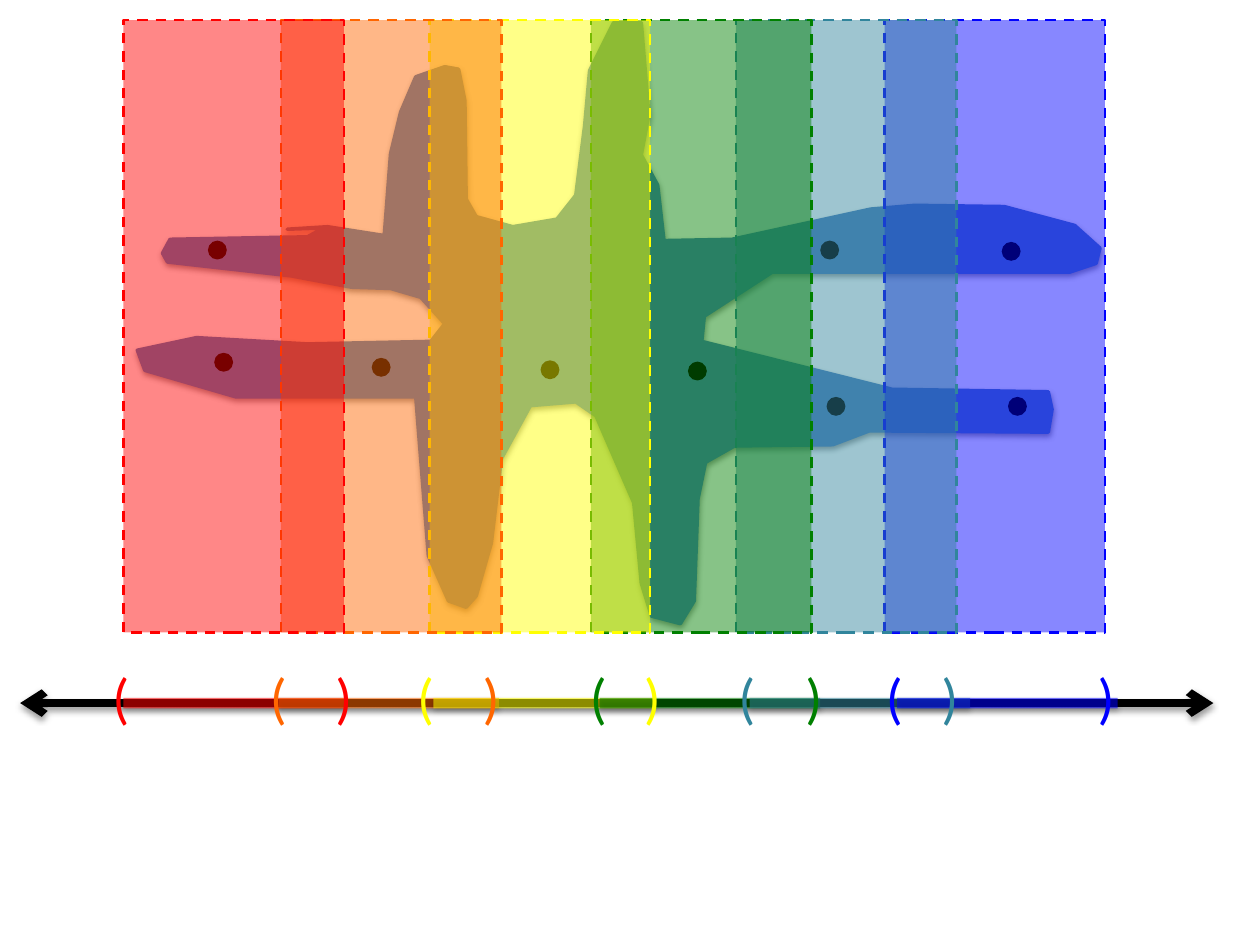
from lxml import etree
from pptx import Presentation
from pptx.dml.color import RGBColor
from pptx.enum.dml import MSO_LINE
from pptx.enum.shapes import MSO_CONNECTOR, MSO_SHAPE
from pptx.enum.text import MSO_AUTO_SIZE
from pptx.oxml.ns import qn
from pptx.util import Inches, Pt

DASH = MSO_LINE.DASH
ELLIPSE = MSO_SHAPE.OVAL
RECTANGLE = MSO_SHAPE.RECTANGLE
STRAIGHT = MSO_CONNECTOR.STRAIGHT
FIT_SHAPE = MSO_AUTO_SIZE.SHAPE_TO_FIT_TEXT

BLOB_COLOR = "4F81BD"
BLACK = "000000"
INTERVAL_LENGTH = 1.75
BAND_TOP, BAND_HEIGHT = 0.16, 4.86
AXIS_Y = 5.58
DOT_SIZE = 0.15

# Colour, left edge of the band, left end of the interval on the axis
COVER = [
    ("FF0000", 0.98, 0.98),
    ("FF6600", 2.23, 2.21),
    ("FFFF00", 3.41, 3.44),
    ("008000", 4.69, 4.76),
    ("31859C", 5.84, 5.95),
    ("0000FF", 7.02, 7.12),
]

# Centres of the opening and closing bracket of each interval, from the text edge
BRACKETS = [(0.16, 1.93), (1.41, 3.10), (2.58, 4.38),
            (3.95, 5.66), (5.13, 6.74), (6.30, 7.98)]

# Dots that belong together share a group
DOT_GROUPS = [
    [(1.65, 1.91), (1.70, 2.80)],
    [(2.95, 2.84)],
    [(4.29, 2.86)],
    [(5.46, 2.87)],
    [(6.51, 1.91), (6.56, 3.15)],
    [(7.95, 1.92), (8.00, 3.15)],
]

# Outline of the blob, in hundredths of an inch
BLOB_OUTLINE = [
    (228, 182), (260, 180), (305, 187), (310, 122), (318, 89), (330, 61),
    (353, 53), (364, 55), (369, 80), (370, 158), (378, 172), (407, 180),
    (442, 174), (457, 155), (464, 100), (468, 56), (487, 18), (509, 18),
    (515, 91), (509, 123), (522, 147), (527, 191), (581, 190), (691, 166),
    (726, 163), (797, 164), (853, 179), (873, 197), (870, 209), (849, 216),
    (613, 216), (559, 251), (557, 271), (708, 309), (832, 311), (835, 325),
    (832, 343), (690, 342), (661, 353), (583, 354), (560, 367), (554, 396),
    (551, 477), (540, 495), (517, 489), (509, 463), (503, 399), (473, 330),
    (457, 319), (421, 322), (398, 364), (390, 431), (378, 473), (370, 482),
    (356, 477), (340, 441), (330, 315), (187, 315), (115, 294), (109, 278),
    (156, 268), (244, 273), (342, 271), (353, 257), (334, 236), (310, 229),
    (279, 228), (231, 219), (133, 208), (129, 201), (135, 190), (244, 188),
    (257, 181),
]


def color(hex_value):
    return RGBColor.from_string(hex_value)


def set_fill(fill, hex_value, opacity=100):
    fill.solid()
    fill.fore_color.rgb = color(hex_value)
    if opacity < 100:
        srgb = fill._xPr.find(".//" + qn("a:srgbClr"))
        etree.SubElement(srgb, qn("a:alpha"), val=str(opacity * 1000))


def set_line(line, hex_value, width, opacity=100):
    set_fill(line.fill, hex_value, opacity)
    line.width = Pt(width)


def add_shadow(shape):
    """Give a shape or connector a soft shadow straight below it."""
    effects = etree.SubElement(shape._element.spPr, qn("a:effectLst"))
    shadow = etree.SubElement(effects, qn("a:outerShdw"), blurRad="40000",
                              dist="20000", dir="5400000", rotWithShape="0")
    tint = etree.SubElement(shadow, qn("a:srgbClr"), val=BLACK)
    etree.SubElement(tint, qn("a:alpha"), val="38000")


def add_blob(page):
    builder = page.shapes.build_freeform(*BLOB_OUTLINE[0], scale=Inches(0.01))
    builder.add_line_segments(BLOB_OUTLINE[1:], close=True)
    blob = builder.convert_to_shape()
    set_fill(blob.fill, BLOB_COLOR)
    set_line(blob.line, BLOB_COLOR, 2)
    add_shadow(blob)


def add_axis_line(page, left, right, hex_value, width, opacity=100):
    line = page.shapes.add_connector(STRAIGHT, Inches(left), Inches(AXIS_Y),
                                     Inches(right), Inches(AXIS_Y))
    set_line(line.line, hex_value, width, opacity)
    add_shadow(line)
    return line


def add_arrowheads(connector):
    outline = connector.line._get_or_add_ln()
    for end in ("a:headEnd", "a:tailEnd"):
        etree.SubElement(outline, qn(end), type="arrow")


def add_brackets(page):
    """Write all brackets on one line, each centred on its own tab stop."""
    box = page.shapes.add_textbox(Inches(0.7), Inches(5.21), Inches(10.98), Inches(0.64))
    box.text_frame.word_wrap = True
    box.text_frame.auto_size = FIT_SHAPE
    para = box.text_frame.paragraphs[0]
    tab_list = etree.SubElement(para._p.get_or_add_pPr(), qn("a:tabLst"))
    marks = sorted((center, symbol, hex_value)
                   for (hex_value, _, _), centers in zip(COVER, BRACKETS)
                   for center, symbol in zip(centers, "()"))
    for center, symbol, hex_value in marks:
        etree.SubElement(tab_list, qn("a:tab"), pos=str(Inches(center)), algn="ctr")
        span = para.add_run()
        span.text = "\t" + symbol
        for name, value in {"size": Pt(32), "name": "Calibri"}.items():
            setattr(span.font, name, value)
        span.font.color.rgb = color(hex_value)


def add_flat_shape(shapes, kind, left, top, width, height, hex_value, opacity=100):
    shape = shapes.add_shape(kind, Inches(left), Inches(top), Inches(width), Inches(height))
    shape.shadow.inherit = False
    set_fill(shape.fill, hex_value, opacity)
    return shape


def add_dots(page):
    for dots in DOT_GROUPS:
        shapes = page.shapes.add_group_shape().shapes if len(dots) > 1 else page.shapes
        for left, top in dots:
            dot = add_flat_shape(shapes, ELLIPSE, left, top, DOT_SIZE, DOT_SIZE, BLACK)
            dot.line.fill.background()


def add_bands(page):
    shapes = page.shapes.add_group_shape().shapes
    for hex_value, left, _ in reversed(COVER):
        band = add_flat_shape(shapes, RECTANGLE, left, BAND_TOP, INTERVAL_LENGTH,
                              BAND_HEIGHT, hex_value, 47)
        set_line(band.line, hex_value, 1.5)
        band.line.dash_style = DASH


def main():
    deck = Presentation()
    deck.slide_width, deck.slide_height = Inches(10), Inches(7.5)
    page = deck.slides.add_slide(deck.slide_layouts[6])
    add_blob(page)
    add_arrowheads(add_axis_line(page, 0.16, 9.63, BLACK, 4.5))
    for hex_value, _, left in COVER:
        add_axis_line(page, left, left + INTERVAL_LENGTH, hex_value, 6, 55)
    add_brackets(page)
    add_dots(page)
    add_bands(page)
    deck.save("out.pptx")


if __name__ == "__main__":
    main()
